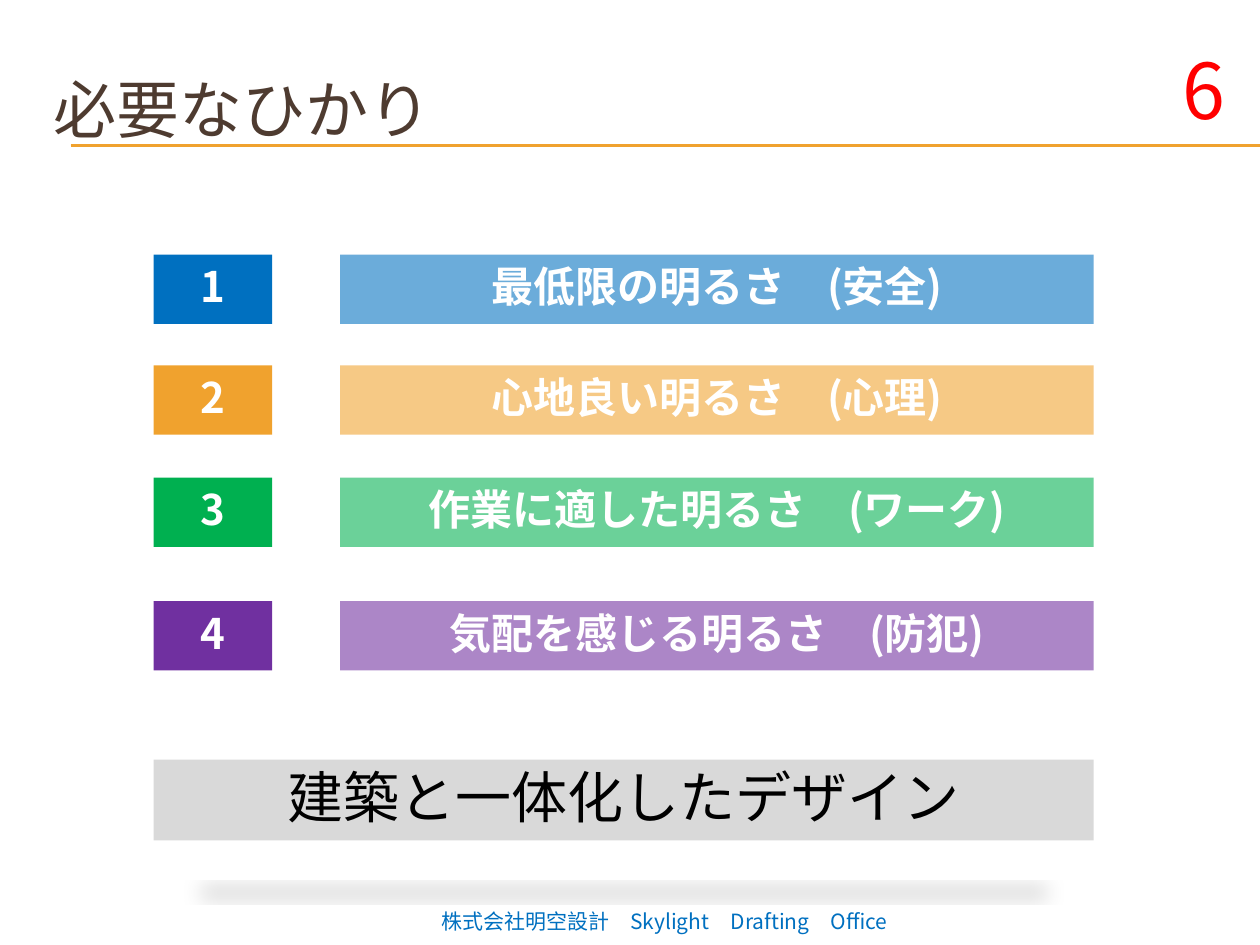
import pptx
import pptx.util
import pptx.dml.color
import pptx.enum.shapes
import pptx.enum.text
import pptx.oxml
import pptx.oxml.ns

# Grid: 100 columns by 75 rows; every box is (left, top, width, height) in cells.
COLS, ROWS = 100, 75
CELL = pptx.util.Inches(0.1)
FONT = "Noto Sans CJK JP"
HUE = {
    "title": "4E3B30", "rule": "F0A22E", "page": "FF0000",
    "blue": "0070C0", "amber": "F0A22E", "green": "00B050",
    "violet": "7030A0", "gray": "D9D9D9", "white": "FFFFFF", "black": "000000",
}
ITEMS = [  # top row within the list, number, colour, text
    (0, "1", "blue", "最低限の明るさ　(安全)"),
    (8.8, "2", "amber", "心地良い明るさ　(心理)"),
    (17.7, "3", "green", "作業に適した明るさ　(ワーク)"),
    (27.5, "4", "violet", "気配を感じる明るさ　(防犯)"),
]
ALIGN = pptx.enum.text.PP_ALIGN
ANCHOR = pptx.enum.text.MSO_ANCHOR


def grid(*cells):
    return [round(cell * CELL) for cell in cells]


def rgb(name):
    return pptx.dml.color.RGBColor.from_string(HUE[name])


def add_xml(parent, body):
    """Append an element written in the drawing namespace."""
    head, rest = body.split(" ", 1)
    spaces = pptx.oxml.ns.nsdecls("a")
    parent.append(pptx.oxml.parse_xml(f"{head} {spaces} {rest}"))


def write(shape, text, size, color, bold=False, align=ALIGN.CENTER,
          anchor=ANCHOR.MIDDLE, pad=0.05):
    frame = shape.text_frame
    frame.word_wrap = True
    frame.vertical_anchor = anchor
    frame.margin_top = frame.margin_bottom = pptx.util.Inches(pad)
    para = frame.paragraphs[0]
    para.alignment = align
    para.line_spacing = 0.9
    run = para.add_run()
    run.text = text
    run.font.name = FONT
    run.font.size = pptx.util.Pt(size)
    run.font.bold = bold
    run.font.color.rgb = rgb(color)
    add_xml(run.font._element, f'<a:ea typeface="{FONT}"/>')


def label(slide, box, text, **form):
    write(slide.shapes.add_textbox(*grid(*box)), text, **form)


def block(slide, box, fill, alpha=None):
    kind = pptx.enum.shapes.MSO_SHAPE.RECTANGLE
    shape = slide.shapes.add_shape(kind, *grid(*box))
    shape.shadow.inherit = False
    shape.line.fill.background()
    shape.fill.solid()
    shape.fill.fore_color.rgb = rgb(fill)
    if alpha:
        tint = shape._element.spPr.find(".//" + pptx.oxml.ns.qn("a:srgbClr"))
        add_xml(tint, f'<a:alpha val="{alpha * 1000}"/>')
    return shape


def rule(slide, left, right, top):
    kind = pptx.enum.shapes.MSO_CONNECTOR.STRAIGHT
    line = slide.shapes.add_connector(kind, *grid(left, top, right, top))
    line.line.color.rgb = rgb("rule")
    line.line.width = pptx.util.Pt(0.75)
    add_xml(line._element.spPr, "<a:effectLst />")


def header(slide, box):
    left, top, wide, high = box
    for gap in (7.1, 7.2):
        rule(slide, left + 2.3, COLS, top + gap)
    label(slide, box, "必要なひかり", size=36, color="title", align=ALIGN.LEFT)


def levels(slide, box):
    left, top, wide, high = box
    tall, badge, start = 5.5, 9.4, 14.8
    form = dict(size=24, color="white", bold=True)
    for row, mark, hue, text in ITEMS:
        write(block(slide, (left, top + row, badge, tall), hue), mark, **form)
        bar = (left + start, top + row, wide - start, tall)
        write(block(slide, bar, hue, alpha=58), text, **form)


def summary(slide, box):
    """Gray conclusion bar with a flattened shadow cast below it."""
    bar = block(slide, box, "gray")
    effect = bar._element.spPr.find(pptx.oxml.ns.qn("a:effectLst"))
    add_xml(effect, '<a:outerShdw blurRad="152400" dist="317500" dir="5400000" '
            'sx="90000" sy="-19000" rotWithShape="0"><a:srgbClr val="000000">'
            '<a:alpha val="15000"/></a:srgbClr></a:outerShdw>')
    write(bar, "建築と一体化したデザイン", size=32, color="black", pad=0)


def footer(slide, box):
    label(slide, box, "株式会社明空設計　Skylight　Drafting　Office",
          size=12, color="blue", align=ALIGN.RIGHT, anchor=ANCHOR.TOP)


def number(slide, box):
    label(slide, box, "6", size=44, color="page", align=ALIGN.RIGHT,
          anchor=ANCHOR.TOP)


def main():
    deck = pptx.Presentation()
    deck.slide_width, deck.slide_height = grid(COLS, ROWS)
    slide = deck.slides.add_slide(deck.slide_layouts[6])
    header(slide, (3.3, 4.4, 95, 9.2))
    summary(slide, (12.2, 60.3, 74.6, 6.4))
    levels(slide, (12.2, 20.2, 74.6, 33))
    footer(slide, (30.2, 71.8, 41.2, 3.2))
    number(slide, (86.7, 3.7, 11.5, 2.7))
    deck.save("out.pptx")


if __name__ == "__main__":
    main()
